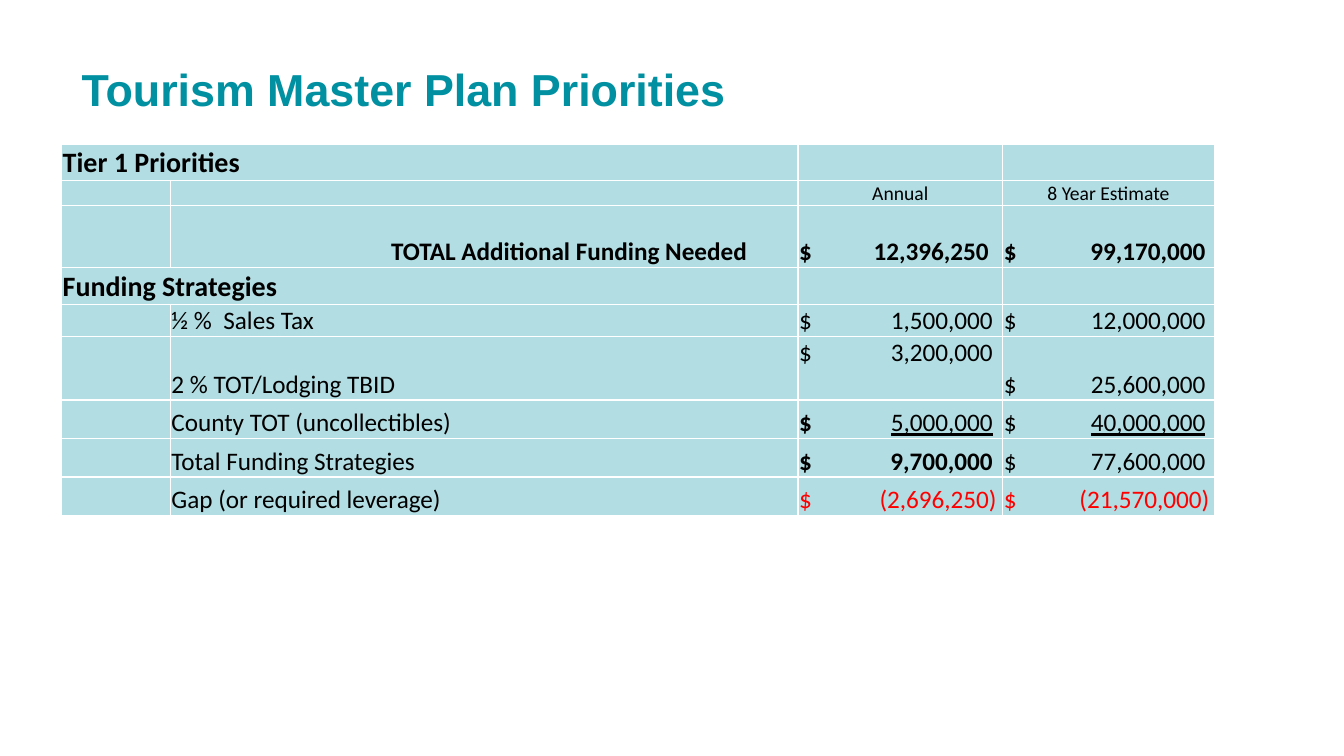
import pptx
import pptx.dml.color
import pptx.enum.text
import pptx.oxml
import pptx.oxml.ns
import pptx.util
from lxml import etree

Cm, Pt = pptx.util.Cm, pptx.util.Pt
ALIGN = pptx.enum.text.PP_ALIGN
ANCHOR = pptx.enum.text.MSO_ANCHOR
COLORS = {"teal": "0090A1", "black": "000000", "red": "FF0000", "white": "FFFFFF"}


def add_node(parent, tag, **attributes):
    return etree.SubElement(parent, pptx.oxml.ns.qn(tag), attributes)


class FundingPage:
    """Holds the style and the current slide, and adds its elements."""

    def __init__(self, deck):
        self.page = deck.slides.add_slide(deck.slide_layouts[5])

    def style(self, font, size, color="black", bold=False, name="Calibri"):
        font.name, font.size, font.bold = name, Pt(size), bold
        font.color.rgb = pptx.dml.color.RGBColor.from_string(COLORS[color])

    def title(self, text):
        box = self.page.shapes.title
        box.left, box.top, box.width, box.height = Cm(1.8), Cm(1.63), Cm(29.21), Cm(1.37)
        box.text_frame.text = text
        box.text_frame.vertical_anchor = ANCHOR.MIDDLE
        para = box.text_frame.paragraphs[0]
        para.alignment, para.line_spacing = ALIGN.LEFT, 0.9
        self.style(para.font, 32, "teal", True, "Arial")

    def table(self, left, top, widths, heights):
        frame = self.page.shapes.add_table(
            len(heights), len(widths), Cm(left), Cm(top), Cm(sum(widths)), Cm(sum(heights)))
        table = frame.table
        table.first_row = table.horz_banding = False
        for column, width in zip(table.columns, widths):
            column.width = Cm(width)
        for row, height in zip(table.rows, heights):
            row.height = Cm(height)
        for cell in table.iter_cells():
            self.blank_cell(cell)
        return table

    def blank_cell(self, cell):
        cell.margin_left = cell.margin_right = cell.margin_top = Cm(0.03)
        cell.margin_bottom = 0
        cell.vertical_anchor = ANCHOR.BOTTOM
        properties = cell._tc.get_or_add_tcPr()
        for side in ("a:lnL", "a:lnR", "a:lnT", "a:lnB"):
            line = add_node(properties, side, w=str(Pt(1)))
            add_node(add_node(line, "a:solidFill"), "a:srgbClr", val=COLORS["white"])
        cell.fill.solid()
        cell.fill.fore_color.rgb = pptx.dml.color.RGBColor.from_string(COLORS["teal"])
        add_node(properties.find(".//a:solidFill/a:srgbClr[@val='%s']" % COLORS["teal"],
                                 properties.nsmap), "a:alpha", val="30000")
        add_node(cell.text_frame.paragraphs[0]._p, "a:endParaRPr", sz="1000")

    def text_cell(self, cell, text, size=18, bold=False, align=ALIGN.LEFT):
        cell.text = text
        para = cell.text_frame.paragraphs[0]
        para.alignment = align
        self.style(para.font, size, bold=bold)

    def amount_cell(self, cell, amount, tab, color="black", bold="", underline=False):
        para = cell.text_frame.paragraphs[0]
        tabs = add_node(para._p.get_or_add_pPr(), "a:tabLst")
        add_node(tabs, "a:tab", pos=str(Cm(tab)), algn="r")
        self.style(para.font, 18, color, bold == "all")
        sign, figure = para.add_run(), para.add_run()
        sign.text, figure.text = "$\t", amount
        if bold == "sign":
            sign.font.bold = True
        if underline:
            figure.font.underline = True


def main():
    deck = pptx.Presentation()
    deck.slide_width, deck.slide_height = Cm(33.87), Cm(19.05)
    sheet = FundingPage(deck)
    sheet.title("Tourism Master Plan Priorities")

    heights = [0.91, 0.63, 1.57, 0.93, 0.8, 1.6, 0.97, 0.97, 0.97]
    table = sheet.table(1.55, 3.63, [2.74, 15.82, 5.16, 5.33], heights)

    for row, heading in ((0, "Tier 1 Priorities"), (3, "Funding Strategies")):
        table.cell(row, 0).merge(table.cell(row, 1))
        sheet.text_cell(table.cell(row, 0), heading, 20, True)
    for column, heading in ((2, "Annual"), (3, "8 Year Estimate")):
        sheet.text_cell(table.cell(1, column), heading, 14, align=ALIGN.CENTER)

    total = table.cell(2, 1)
    sheet.text_cell(total, "TOTAL Additional Funding Needed", bold=True, align=ALIGN.RIGHT)
    total.margin_right = Cm(1.28)
    sheet.amount_cell(table.cell(2, 2), "12,396,250", 4.78, bold="all")
    sheet.amount_cell(table.cell(2, 3), "99,170,000", 5.08, bold="all")

    strategies = [
        ("½ %  Sales Tax", "1,500,000", "12,000,000", "black", "", False),
        ("2 % TOT/Lodging TBID", "3,200,000", "25,600,000", "black", "", False),
        ("County TOT (uncollectibles)", "5,000,000", "40,000,000", "black", "sign", True),
        ("Total Funding Strategies", "9,700,000", "77,600,000", "black", "all", False),
        ("Gap (or required leverage)", "(2,696,250)", "(21,570,000)", "red", "", False),
    ]
    for row, (label, annual, estimate, color, bold, underline) in enumerate(strategies, 4):
        overhang = 0.1 if color == "red" else 0
        sheet.text_cell(table.cell(row, 1), label)
        sheet.amount_cell(table.cell(row, 2), annual, 4.88 + overhang, color, bold, underline)
        sheet.amount_cell(table.cell(row, 3), estimate, 5.08 + overhang, color,
                          underline=underline)
    table.cell(5, 2).vertical_anchor = ANCHOR.TOP

    deck.save("out.pptx")


if __name__ == "__main__":
    main()
